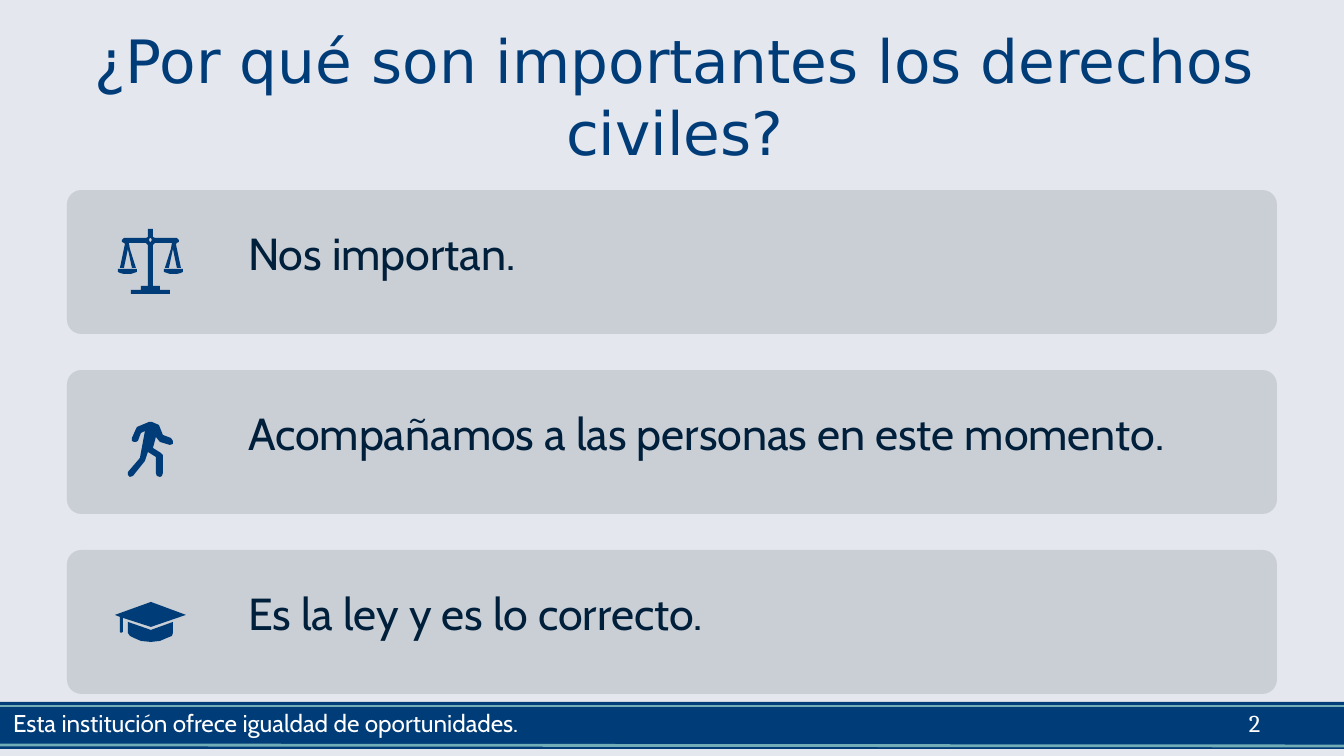
import pptx
import pptx.util
import pptx.dml.color
import pptx.enum.shapes
import pptx.enum.text
import pptx.oxml

PX = 914400 / 134.4
COLORS = {
    "page": "E4E7EE",
    "navy": "003C78",
    "teal": "71ADB6",
    "card": "CACED5",
    "ink": "001F3B",
    "white": "FFFFFF",
}


def px(n):
    """Turn pixels into EMU."""
    return pptx.util.Emu(round(n * PX))


def rgb(name):
    """Look up a named colour."""
    return pptx.dml.color.RGBColor.from_string(COLORS[name])


def mirror(half, total=167):
    """Close a left half outline with its reflection."""
    return half + [(total - x, y) for x, y in reversed(half)]


PAN = [(51, 79), (51, 82), (53, 83), (57, 84), (64, 84), (67, 83), (70, 82), (70, 79)]
SCALES = [
    mirror([(81, 39), (81, 47), (79, 48), (57, 48), (55, 50), (55, 52), (57, 53),
            (58, 54), (53, 78), (57, 78), (61, 59), (65, 78), (69, 78), (63, 59),
            (62, 53), (79, 53), (81, 55), (81, 96), (74, 96), (74, 100),
            (64, 100), (64, 104)]),
    mirror([(83, 48), (82, 50), (83, 52)]),
    PAN,
    [(167 - x, y) for x, y in PAN],
]
WALKER = [
    [(93, 107), (90, 106), (89, 103), (89, 87), (81, 82), (78, 91), (66, 106),
     (63, 107), (61, 105), (61, 102), (73, 88), (78, 61), (74, 63), (71, 71),
     (69, 72), (67, 72), (65, 71), (65, 68), (69, 59), (70, 57), (82, 52),
     (85, 52), (92, 55), (96, 65), (104, 68), (106, 71), (106, 74), (103, 75),
     (93, 72), (89, 67), (86, 78), (94, 83), (96, 85), (96, 103), (95, 106)],
]
CAP = [
    [(106, 72), (84, 80), (61, 72), (61, 83), (63, 86), (67, 88), (74, 91),
     (84, 92), (93, 91), (100, 88), (105, 86), (106, 83)],
    [(119, 65), (84, 52), (48, 65), (53, 67), (53, 82), (54, 83), (56, 82),
     (56, 68), (84, 77)],
]
CARDS = [
    (SCALES, "Nos importan."),
    (WALKER, "Acompañamos a las personas en este momento."),
    (CAP, "Es la ley y es lo correcto."),
]


def paint(sp, color):
    """Give a shape a plain fill."""
    sp.shadow.inherit = False
    sp.fill.solid()
    sp.fill.fore_color.rgb = rgb(color)
    sp.line.fill.background()


def write(sp, text, size, font, color, align=pptx.enum.text.PP_ALIGN.LEFT):
    """Set and format the text of a box."""
    tf = sp.text_frame
    tf.word_wrap = True
    tf.auto_size = pptx.enum.text.MSO_AUTO_SIZE.NONE
    tf.vertical_anchor = pptx.enum.text.MSO_ANCHOR.TOP
    tf.margin_left = tf.margin_right = tf.margin_bottom = 0
    tf.margin_top = px(1)
    tf.text = text
    p = tf.paragraphs[0]
    p.alignment = align
    p.font.size = pptx.util.Pt(size)
    p.font.name = font
    p.font.color.rgb = rgb(color)


def add_text(s, x, y, w, h, text, size, font, color):
    """Add a text box."""
    sp = s.shapes.add_textbox(px(x), px(y), px(w), px(h))
    write(sp, text, size, font, color)


def add_icon(s, x, y, outlines):
    """Draw outlines as one freeform from a corner point."""
    (start, *rest), *others = outlines
    fb = s.shapes.build_freeform(*start, scale=PX)
    fb.add_line_segments(rest)
    for first, *points in others:
        fb.move_to(*first)
        fb.add_line_segments(points)
    paint(fb.convert_to_shape(px(x), px(y)), "navy")


def add_title(s, x, y, w, h):
    """Place the slide title."""
    sp = s.shapes.title
    sp.left, sp.top, sp.width, sp.height = px(x), px(y), px(w), px(h)
    write(sp, "¿Por qué son importantes los derechos civiles?", 32, "DejaVu Sans",
          "navy", pptx.enum.text.PP_ALIGN.CENTER)


def add_card(s, x, y, w, h, icon, text):
    """Add a rounded card with an icon and a statement."""
    shape_type = pptx.enum.shapes.MSO_SHAPE.ROUNDED_RECTANGLE
    sp = s.shapes.add_shape(shape_type, px(x), px(y), px(w), px(h))
    sp.adjustments[0] = 0.1
    paint(sp, "card")
    add_icon(s, x, y, icon)
    add_text(s, x + 181, y + 35, 969, 56, text, 24, "Cabin", "ink")


def add_footer(s, x, y, w, h):
    """Add the footer band with its rules, notice and page number."""
    shape_type = pptx.enum.shapes.MSO_SHAPE.RECTANGLE
    sp = s.shapes.add_shape(shape_type, px(x), px(y), px(w), px(h))
    paint(sp, "navy")
    for start, end in ((4, 4), (43, 44)):
        line = s.shapes.add_connector(pptx.enum.shapes.MSO_CONNECTOR.STRAIGHT,
                                      px(x), px(y + start), px(x + w), px(y + end))
        line.line.color.rgb = rgb("teal")
        line.line.width = pptx.util.Pt(1.5)
        effects = pptx.oxml.parse_xml(
            '<a:effectLst xmlns:a="http://schemas.openxmlformats.org/drawingml/2006/main"/>')
        line._element.spPr.append(effects)
    add_text(s, x + 13, y + 5, 873, 31,
             "Esta institución ofrece igualdad de oportunidades.", 13, "Cabin", "white")
    add_text(s, x + 1249, y + 5, 27, 31, "2", 13, "Cambria", "white")


def main():
    """Build and save the slide."""
    prs = pptx.Presentation()
    prs.slide_width, prs.slide_height = px(1344), px(756)
    s = prs.slides.add_slide(prs.slide_layouts[5])
    s.background.fill.solid()
    s.background.fill.fore_color.rgb = rgb("page")
    add_title(s, 70, 23, 1210, 146)
    for i, (icon, text) in enumerate(CARDS):
        add_card(s, 67, 190 + 180 * i, 1210, 144, icon, text)
    add_footer(s, 0, 702, 1344, 47)
    prs.save("out.pptx")


if __name__ == "__main__":
    main()
